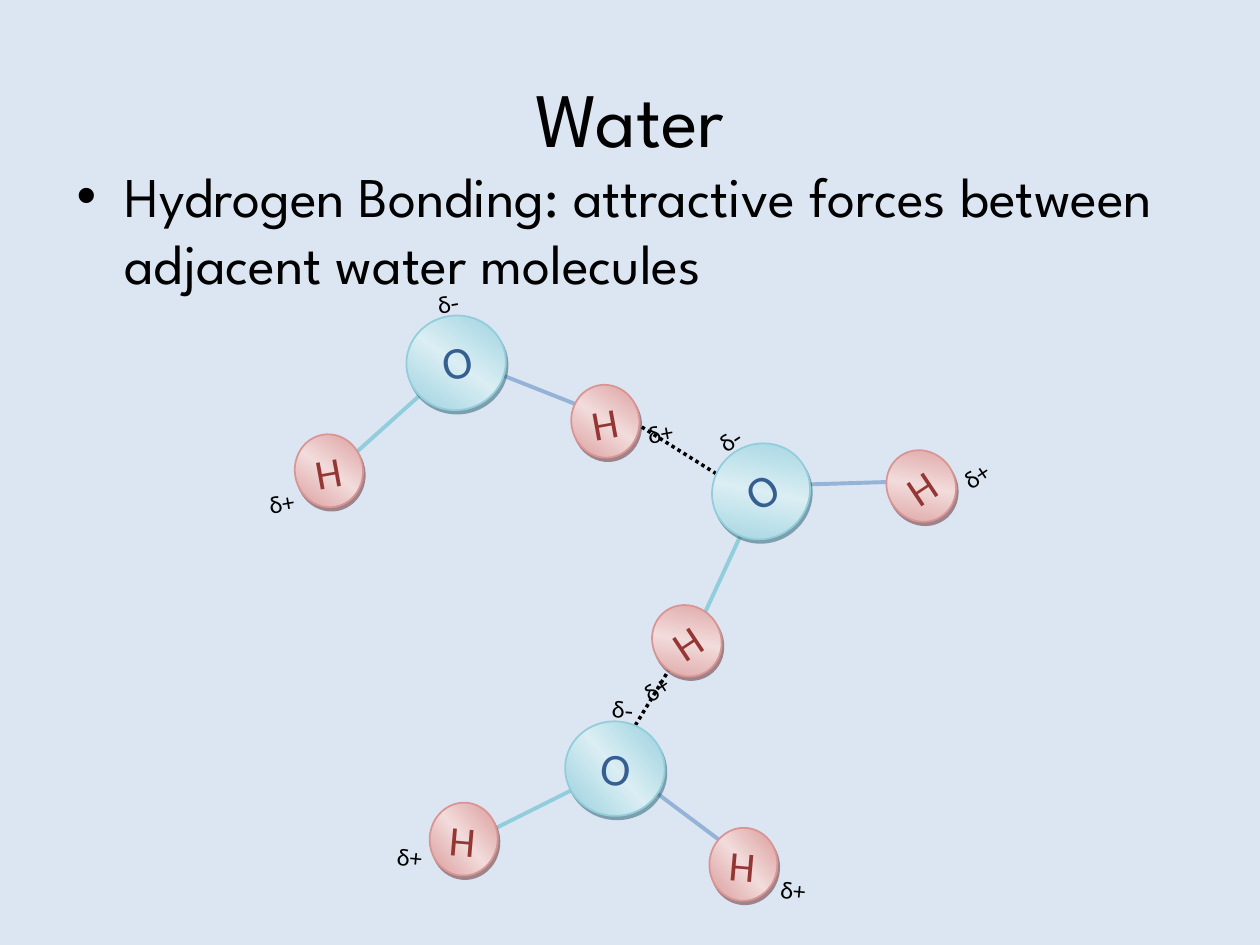
import math
import pptx
import pptx.util
import pptx.oxml
import pptx.oxml.ns
import pptx.dml.color
import pptx.enum.dml
import pptx.enum.shapes
import pptx.enum.text

Inches, Pt = pptx.util.Inches, pptx.util.Pt

THEME = {
    "back": "DCE6F2", "ink": "000000",
    "head": "League Spartan", "font": "Calibri", "sign": "Times New Roman",
    "title": 44, "body": 32, "delta": 14,
    "bonds": ("92CDDC", "95B3D7"), "bond": 2.25, "dots": 2,
}
ATOMS = {
    "O": {"size": (0.79, 0.75), "edge": "92CDDC", "glow": "DAEEF3", "shade": "205867",
          "ink": "365F91", "pt": 26, "box": (0.46, 0.51), "shift": (0.02, -0.02)},
    "H": {"size": (0.54, 0.58), "edge": "D99594", "glow": "F2DBDB", "shade": "622423",
          "ink": "943634", "pt": 24, "box": (0.38, 0.49), "shift": (-0.02, 0)},
}
TITLE = "Water"
BODY = "Hydrogen Bonding: attractive forces between adjacent water molecules"
LINKS = [((5.55, 4.92), (4.84, 6.09)), ((5.78, 3.82), (4.92, 3.28))]

# Offsets from the oxygen centre, in inches
BONDS = [((-0.28, 0.14), (-1.04, 0.52)), ((0.34, 0.2), (0.9, 0.62))]
PARTS = [("O", (0, 0)), ("H", (-1.2, 0.56)), ("H", (1.02, 0.76))]
SIGNS = [("-", (0.21, -0.45), (0.66, 0.36)),
         ("+", (-1.6, 0.74), (0.46, 0.4)),
         ("+", (1.43, 1.0), (0.43, 0.4))]
TILT = 5
WATERS = [((4.88, 6.1), 5), ((6.04, 3.9), 326.4), ((3.62, 2.88), 349.7)]

GRAD = """<a:gradFill %s rotWithShape="1"><a:gsLst>
<a:gs pos="0"><a:srgbClr val="{edge}"/></a:gs>
<a:gs pos="50000"><a:srgbClr val="{glow}"/></a:gs>
<a:gs pos="100000"><a:srgbClr val="{edge}"/></a:gs>
</a:gsLst><a:lin ang="18900000" scaled="1"/></a:gradFill>""" % pptx.oxml.ns.nsdecls("a")
SHADE = """<a:effectLst %s><a:outerShdw dist="28000" dir="3780000" algn="ctr" rotWithShape="0">
<a:srgbClr val="{shade}"><a:alpha val="50000"/></a:srgbClr>
</a:outerShdw></a:effectLst>""" % pptx.oxml.ns.nsdecls("a")


def color(code):
    return pptx.dml.color.RGBColor.from_string(code)


def style(run, font, size, ink):
    run.font.name, run.font.size = font, Pt(size)
    run.font.color.rgb = color(ink)


def tag(name, **values):
    node = pptx.oxml.parse_xml("<a:%s %s/>" % (name, pptx.oxml.ns.nsdecls("a")))
    for key, value in values.items():
        node.set(key, value)
    return node


def place(origin, offset, turn):
    angle = math.radians(turn)
    cos, sin = math.cos(angle), math.sin(angle)
    (left, top), (across, down) = origin, offset
    return left + across * cos - down * sin, top + across * sin + down * cos


def frame(center, size):
    corner = [mid - span / 2 for mid, span in zip(center, size)]
    return [Inches(value) for value in (*corner, *size)]


def line(shapes, start, end, ink, width):
    kind = pptx.enum.shapes.MSO_CONNECTOR.STRAIGHT
    item = shapes.add_connector(kind, *[Inches(v) for v in (*start, *end)])
    item.line.color.rgb, item.line.width = color(ink), Pt(width)
    item._element.spPr.append(tag("effectLst"))
    return item


def label(shapes, center, size, tilt, runs, points, ink):
    box = shapes.add_textbox(*frame(center, size))
    box.rotation = tilt
    box.text_frame.word_wrap = True
    para = box.text_frame.paragraphs[0]
    para.space_after = Pt(10)
    for text, font in runs:
        run = para.add_run()
        run.text = text
        style(run, font, points, ink)


def ball(shapes, center, atom, tilt):
    kind = pptx.enum.shapes.MSO_SHAPE.OVAL
    item = shapes.add_shape(kind, *frame(center, atom["size"]))
    item.rotation = tilt
    item.line.color.rgb, item.line.width = color(atom["edge"]), Pt(1)
    props = item._element.spPr
    props.insert(2, pptx.oxml.parse_xml(GRAD.format(**atom)))
    props.append(pptx.oxml.parse_xml(SHADE.format(**atom)))


def water(slide, center, tilt):
    shapes = slide.shapes.add_group_shape().shapes
    turn = tilt - TILT
    for ends, ink in zip(BONDS, THEME["bonds"]):
        start, end = [place(center, spot, turn) for spot in ends]
        line(shapes, start, end, ink, THEME["bond"])
    for name, spot in PARTS:
        ball(shapes, place(center, spot, turn), ATOMS[name], tilt)
    for name, spot in PARTS:
        atom = ATOMS[name]
        spot = [a + b for a, b in zip(spot, atom["shift"])]
        label(shapes, place(center, spot, turn), atom["box"], tilt,
              [(name, THEME["font"])], atom["pt"], atom["ink"])
    for sign, spot, size in SIGNS:
        font = THEME["sign"] if sign == "-" else THEME["font"]
        label(shapes, place(center, spot, turn), size, tilt,
              [("δ", THEME["font"]), (sign, font)], THEME["delta"], THEME["ink"])


def words(slide):
    title = slide.shapes.title
    title.left, title.top, title.width, title.height = map(Inches, (0.5, 0.3, 9, 1.25))
    title.text_frame.text = TITLE
    title.text_frame.vertical_anchor = pptx.enum.text.MSO_ANCHOR.MIDDLE
    para = title.text_frame.paragraphs[0]
    para.alignment = pptx.enum.text.PP_ALIGN.CENTER
    style(para.runs[0], THEME["head"], THEME["title"], THEME["ink"])

    body = slide.shapes.add_textbox(*map(Inches, (0.51, 1.23, 9, 4.95)))
    body.text_frame.word_wrap = True
    body.text_frame.text = BODY
    para = body.text_frame.paragraphs[0]
    style(para.runs[0], THEME["head"], THEME["body"], THEME["ink"])
    props = para._p.get_or_add_pPr()
    props.set("marL", str(Inches(0.38)))
    props.set("indent", str(Inches(-0.38)))
    space = tag("spcBef")
    space.append(tag("spcPct", val="20000"))
    props.extend([space, tag("buFont", typeface="Arial"), tag("buChar", char="•")])


def main():
    deck = pptx.Presentation()
    deck.slide_width, deck.slide_height = Inches(10), Inches(7.5)
    slide = deck.slides.add_slide(deck.slide_layouts[5])
    slide.background.fill.solid()
    slide.background.fill.fore_color.rgb = color(THEME["back"])
    for start, end in LINKS:
        link = line(slide.shapes, start, end, THEME["ink"], THEME["dots"])
        link.line.dash_style = pptx.enum.dml.MSO_LINE.ROUND_DOT
    words(slide)
    for center, tilt in WATERS:
        water(slide, center, tilt)
    deck.save("out.pptx")


if __name__ == "__main__":
    main()
